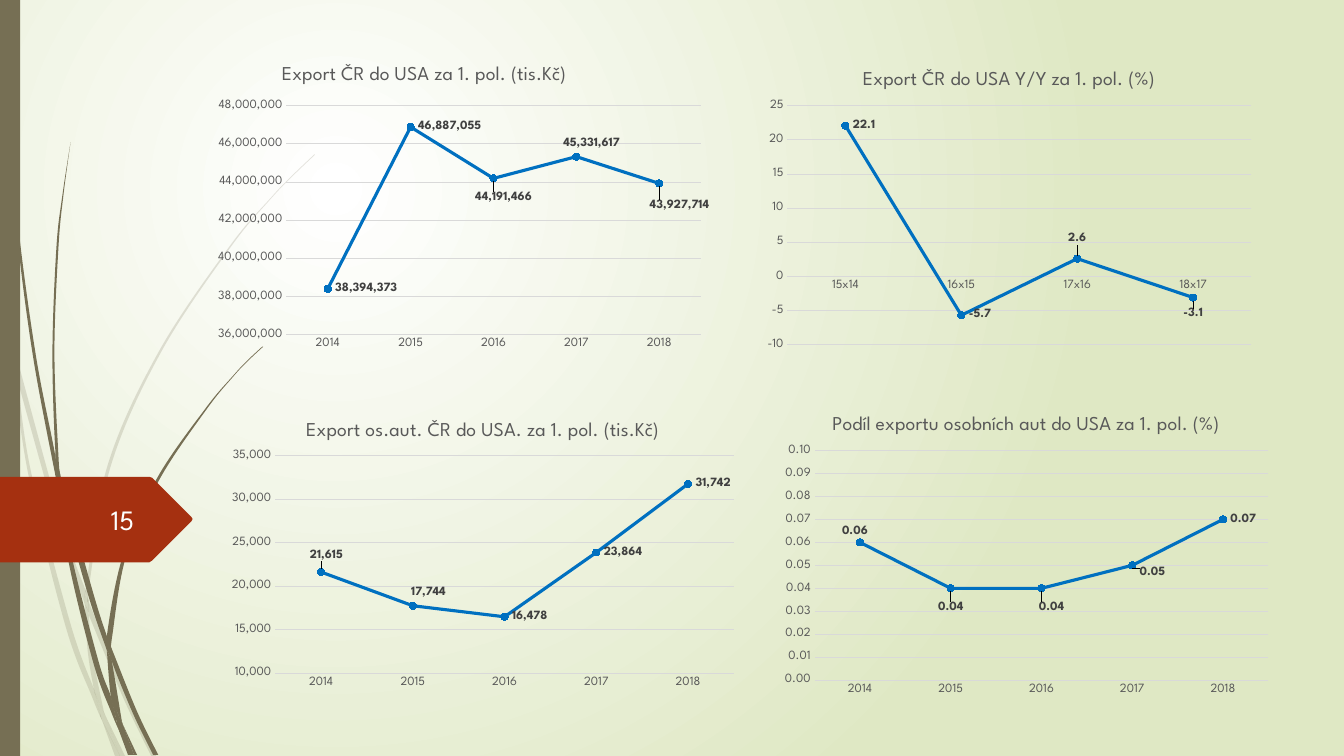
from typing import NamedTuple

from pptx import Presentation, util as u
from pptx.chart.data import CategoryChartData
from pptx.dml.color import RGBColor
from pptx.enum import chart as ch, shapes, text
from pptx.oxml import parse_xml
from pptx.oxml.ns import nsdecls, qn

COLUMNS, ROWS = 1333, 750  # slide grid
CELL = u.Inches(0.01)


class Theme(NamedTuple):
    font: str = "League Spartan"
    stem: str = "766F54"
    badge: str = "A53010"
    number: str = "FEFFFF"
    series: str = "0070C0"
    muted: str = "595959"
    label: str = "404040"
    grid: str = "D9D9D9"
    glow: tuple = ("FFFFFF", "DFE8C4")
    sizes: dict = {"number": 20, "title": 14, "chart": 10, "axis": 9}


class Blade(NamedTuple):
    """Two smooth edges, in grid columns and rows, that meet at their ends."""
    out: tuple
    back: tuple


class Label(NamedTuple):
    point: int
    above: bool
    dx: float = 0
    dy: float = 0


class Panel(NamedTuple):
    title: str
    box: tuple    # column, row, columns, rows
    plot: tuple   # column, row, columns, rows
    names: tuple
    values: tuple
    scale: tuple  # minimum, maximum, step
    axis_format: str
    label_format: str
    labels: tuple
    title_at: tuple = ()  # shares of the box


THEME = Theme()
YEARS = ("2014", "2015", "2016", "2017", "2018")
PANELS = (
    Panel("Export ČR do USA za 1. pol. (tis.Kč)", (206, 54, 500, 300), (284, 105, 411, 227),
          YEARS, (38394373, 46887055, 44191466, 45331617, 43927714), (36000000, 48000000, 2000000), "#,##0", "#,##0",
          (Label(2, False, 0.02, 0.02), Label(3, True, 0.03), Label(4, False, 0.04, 0.03)), (0.14, 0.02)),
    Panel("Export ČR do USA Y/Y za 1. pol. (%)", (751, 54, 500, 300), (781, 105, 460, 237),
          ("15x14", "16x15", "17x16", "18x17"), (22.1, -5.7, 2.6, -3.1), (-10, 25, 5), "0", "#,##0.0",
          (Label(2, True, 0, -0.02), Label(3, False, 0, 0.01))),
    Panel("Podíl exportu osobních aut do USA za 1. pol. (%)", (768, 396, 500, 300), (808, 447, 450, 228),
          YEARS, (0.06, 0.04, 0.04, 0.05, 0.07), (0, 0.1, 0.01), "0.00", "#,##0.00",
          (Label(0, True, -0.01, 0.01), Label(1, False, 0, 0.02), Label(2, False, 0.02, 0.02),
           Label(3, False, 0.04, -0.02))),
    Panel("Export os.aut. ČR do USA. za 1. pol. (tis.Kč)", (219, 403, 520, 287), (273, 452, 455, 216),
          YEARS, (21615, 17744, 16478, 23864, 31742), (10000, 35000, 5000), "#,##0", "#,##0",
          (Label(0, True, 0.01, -0.01), Label(1, True, 0.03))),
)
PALE_BLADES = (
    Blade(((11, 350), (9, 322), (0, 282)), ((0, 299), (10, 344), (11, 350))),
    Blade(((14, 345), (62, 520), (85, 586)), ((84, 599), (58, 522), (17, 376))),
    Blade(((88, 596), (92, 607), (127, 692), (155, 750)), ((150, 750), (123, 694), (88, 610))),
    Blade(((119, 750), (124, 750)), ((105, 711), (119, 750))),
    Blade(((11, 350), (17, 376), (31, 469), (70, 619), (93, 683)),
          ((99, 707), (101, 714), (92, 693), (65, 621), (28, 470), (11, 350))),
    Blade(((84, 599), (87, 646), (93, 683), (96, 692), (105, 711)), ((103, 706), (91, 646), (88, 610), (84, 599))),
    Blade(((88, 596), (88, 584), (110, 462), (160, 349), (229, 245), (268, 198), (290, 175), (312, 154)),
          ((312, 153), (289, 175), (268, 197), (228, 244), (158, 348), (107, 461), (85, 584), (85, 586))),
    Blade(((101, 714), (114, 750)), ((119, 750), (101, 714))),
    Blade(((88, 608), (88, 596), (85, 586)), ((84, 599), (88, 608))),
    Blade(((93, 683), (99, 707), (101, 714), (119, 750)), ((105, 711), (96, 692), (93, 683))),
)
DARK_BLADES = (
    Blade(((4, 0), (5, 48), (8, 109), (19, 232), (36, 355), (55, 453), (57, 481)),
          ((56, 477), (33, 355), (17, 233), (7, 110), (4, 48), (3, 0))),
    Blade(((60, 472), (93, 590), (106, 631)), ((106, 645), (88, 592), (64, 505), (60, 472))),
    Blade(((110, 641), (113, 649), (136, 706), (157, 749)), ((152, 749), (132, 708), (111, 656), (110, 641))),
    Blade(((57, 477), (64, 505), (72, 556), (98, 657), (110, 691), (116, 717)),
          ((117, 722), (111, 708), (93, 659), (68, 557), (57, 477))),
    Blade(((60, 472), (58, 453), (54, 349), (58, 245), (63, 193), (70, 141)),
          ((70, 141), (62, 193), (56, 245), (52, 349), (55, 449), (60, 472))),
    Blade(((133, 749), (136, 749)), ((122, 719), (133, 749))),
    Blade(((57, 477), (64, 505), (60, 472)), ((55, 449), (55, 453), (57, 477))),
    Blade(((111, 633), (125, 552), (158, 476), (205, 406), (231, 374), (245, 359), (261, 344)),
          ((260, 344), (245, 358), (231, 373), (204, 405), (156, 474), (122, 551), (106, 631), (110, 641))),
    Blade(((117, 722), (127, 749)), ((131, 749), (117, 722))),
    Blade(((106, 645), (110, 691), (116, 706), (122, 719)), ((121, 716), (111, 656), (109, 651), (106, 645))),
    Blade(((106, 645), (109, 651), (111, 656)), ((110, 641), (106, 631), (106, 645))),
    Blade(((110, 691), (116, 717), (117, 722), (130, 749)), ((133, 749), (122, 719), (116, 706), (110, 691))),
)
BADGE = ((0, 473), (148, 473), (151, 474), (190, 513), (191, 515), (190, 517), (151, 556), (148, 558), (0, 558))


def cells(*lengths: float) -> list:
    return [u.Emu(round(length * CELL)) for length in lengths]


def paint(shape, colour: str, alpha: int = 100) -> None:
    shape.shadow.inherit = False
    shape.fill.solid()
    shape.fill.fore_color.rgb = RGBColor.from_string(colour)
    shape.line.fill.background()
    if alpha < 100:
        tint = shape.element.spPr.find(".//" + qn("a:srgbClr"))
        tint.append(parse_xml(f'<a:alpha {nsdecls("a")} val="{alpha * 1000}"/>'))


def draw_outline(slide, points: tuple, colour: str, alpha: int = 100):
    start, *rest = [cells(*point) for point in points]
    builder = slide.shapes.build_freeform(*start)
    builder.add_line_segments(rest, close=True)
    shape = builder.convert_to_shape()
    paint(shape, colour, alpha)
    return shape


def draw_blade(slide, blade: Blade, alpha: int) -> None:
    """Draws the outline, then bends each edge into Bézier curves through its points."""
    shape = draw_outline(slide, blade.out + blade.back, THEME.stem, alpha)
    nodes = list(shape.element.iter(qn("a:pt")))
    split = len(blade.out)
    for edge in (nodes[:split], nodes[split:split + len(blade.back)]):
        knots = [(int(node.get("x")), int(node.get("y"))) for node in edge]
        knots = [knots[0], *knots, knots[-1]]
        for node, a, b, c, d in zip(edge[1:], knots, knots[1:], knots[2:], knots[3:]):
            first = [round(q + (r - p) / 6) for p, q, r in zip(a, b, c)]
            second = [round(q - (r - p) / 6) for p, q, r in zip(b, c, d)]
            points = "".join(f'<a:pt x="{x}" y="{y}"/>' for x, y in (first, second, c))
            line = node.getparent()
            line.getparent().replace(line, parse_xml(f'<a:cubicBezTo {nsdecls("a")}>{points}</a:cubicBezTo>'))


def set_font(font, size: str, colour: str, bold: bool = False) -> None:
    font.name, font.size, font.bold = THEME.font, u.Pt(THEME.sizes[size]), bold
    font.color.rgb = RGBColor.from_string(colour)


def manual_layout(mode: str = "", **shares: float):
    places = "".join(f'<c:{key} val="{share:.4f}"/>' for key, share in shares.items())
    return parse_xml(f'<c:layout {nsdecls("c")}><c:manualLayout>{mode}{places}</c:manualLayout></c:layout>')


def draw_panel(slide, panel: Panel) -> None:
    data = CategoryChartData(number_format=panel.label_format)
    data.categories = panel.names
    data.add_series("Series 1", panel.values)
    chart = slide.shapes.add_chart(ch.XL_CHART_TYPE.LINE_MARKERS, *cells(*panel.box), data).chart
    set_font(chart.font, "chart", "000000")
    chart.has_legend, chart.has_title = False, True
    heading = chart.chart_title.text_frame
    heading.text = panel.title
    set_font(heading.paragraphs[0].font, "title", THEME.muted)
    # Axes
    names, values = chart.category_axis, chart.value_axis
    for axis in (names, values):
        axis.major_tick_mark = axis.minor_tick_mark = ch.XL_TICK_MARK.NONE
        set_font(axis.tick_labels.font, "axis", THEME.muted)
    values.minimum_scale, values.maximum_scale, values.major_unit = panel.scale
    values.tick_labels.number_format, values.tick_labels.number_format_is_linked = panel.axis_format, False
    values.format.line.fill.background()
    # Line, markers and rules
    series = chart.plots[0].series[0]
    series.smooth = False
    series.marker.style, series.marker.size = ch.XL_MARKER_STYLE.CIRCLE, 5
    series.marker.format.fill.solid()
    series.marker.format.fill.fore_color.rgb = RGBColor.from_string(THEME.series)
    for part, colour, width in ((names, THEME.grid, 0.75), (values.major_gridlines, THEME.grid, 0.75),
                                (series, THEME.series, 2.25), (series.marker, THEME.series, 0.75)):
        part.format.line.color.rgb, part.format.line.width = RGBColor.from_string(colour), u.Pt(width)
    # Value labels, without leader lines
    labels = series.data_labels
    labels.show_value, labels.position = True, ch.XL_LABEL_POSITION.RIGHT
    labels.number_format, labels.number_format_is_linked = panel.label_format, False
    set_font(labels.font, "axis", THEME.label, True)
    for label in panel.labels:
        tag = series.points[label.point].data_label
        set_font(tag.font, "axis", THEME.label, True)
        tag.position = ch.XL_LABEL_POSITION.ABOVE if label.above else ch.XL_LABEL_POSITION.BELOW
        index = chart.element.xpath(f".//c:dLbl/c:idx[@val='{label.point}']")[0]
        index.addnext(manual_layout(x=label.dx, y=label.dy))
    chart.element.xpath(".//c:ser/c:dLbls")[0].append(parse_xml(
        f'<c:extLst {nsdecls("c")}><c:ext uri="{{CE6537A1-D6FC-4f65-9D91-7224C49458BB}}" '
        'xmlns:c15="http://schemas.microsoft.com/office/drawing/2012/chart">'
        '<c15:showLeaderLines val="0"/></c:ext></c:extLst>'))
    # Title and plot positions, clear backgrounds
    edge = '<c:xMode val="edge"/><c:yMode val="edge"/>'
    area, title = (chart.element.find(".//" + qn(tag)) for tag in ("c:plotArea", "c:title"))
    for old in area.findall(qn("c:layout")) + (title.findall(qn("c:layout")) if panel.title_at else []):
        old.getparent().remove(old)
    if panel.title_at:
        title.find(qn("c:tx")).addnext(manual_layout(edge, x=panel.title_at[0], y=panel.title_at[1]))
    (left, top, width, height), (x, y, w, h) = panel.box, panel.plot
    area.insert(0, manual_layout('<c:layoutTarget val="inner"/>' + edge, x=(x - left) / width,
                                 y=(y - top) / height, w=w / width, h=h / height))
    clear = f'<c:spPr {nsdecls("c", "a")}><a:noFill/><a:ln><a:noFill/></a:ln></c:spPr>'
    area.append(parse_xml(clear))
    chart.element.find(qn("c:txPr")).addprevious(parse_xml(clear))


def main() -> None:
    deck = Presentation()
    deck.slide_width, deck.slide_height = cells(COLUMNS, ROWS)
    slide = deck.slides.add_slide(deck.slide_layouts[6])
    # Background glow
    fill = slide.background.fill
    fill.gradient()
    for stop, colour, position in zip(fill.gradient_stops, THEME.glow, (0, 1)):
        stop.color.rgb, stop.position = RGBColor.from_string(colour), position
    gradient = slide.element.find(".//" + qn("a:gradFill"))
    gradient.replace(gradient.find(qn("a:lin")), parse_xml(
        f'<a:path {nsdecls("a")} path="circle"><a:fillToRect l="50000" t="50000" r="100000" b="100000"/></a:path>'))
    # Grass, side bar and page badge
    for blades, alpha in ((PALE_BLADES, 20), (DARK_BLADES, 100)):
        for blade in blades:
            draw_blade(slide, blade, alpha)
    paint(slide.shapes.add_shape(shapes.MSO_SHAPE.RECTANGLE, *cells(0, 0, 20, ROWS)), THEME.stem)
    draw_outline(slide, BADGE, THEME.badge)
    number = slide.shapes.add_textbox(*cells(58, 495, 85, 40)).text_frame
    number.word_wrap, number.vertical_anchor = True, text.MSO_ANCHOR.MIDDLE
    number.text = "15"
    number.paragraphs[0].alignment = text.PP_ALIGN.RIGHT
    set_font(number.paragraphs[0].font, "number", THEME.number)
    for panel in PANELS:
        draw_panel(slide, panel)
    deck.save("out.pptx")


if __name__ == "__main__":
    main()
